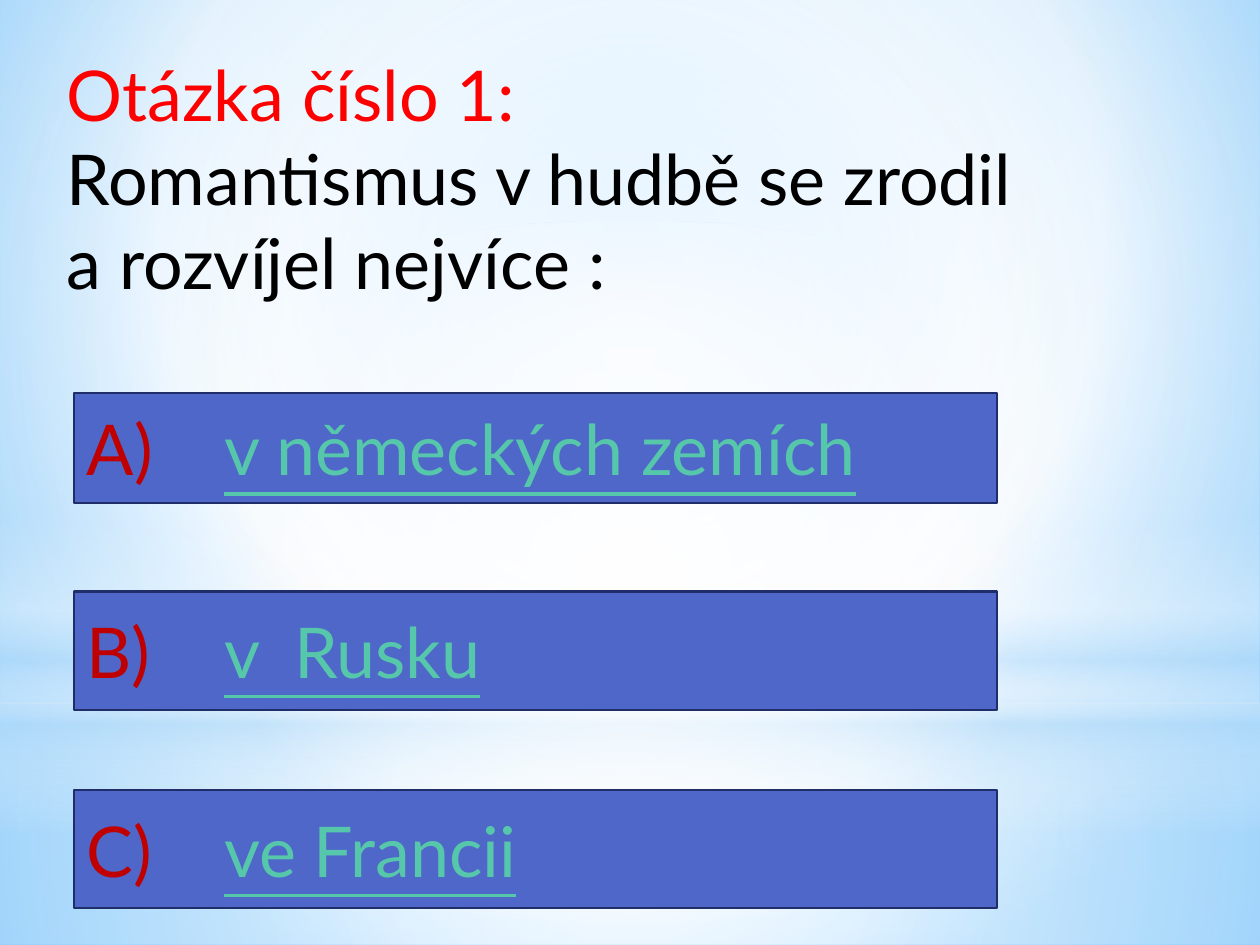
from lxml import etree
from pptx import Presentation
from pptx import util as u
from pptx.dml.color import RGBColor
from pptx.enum import shapes, text
from pptx.oxml.ns import qn

FONT = "Lato"
WHITE, PALE_BLUE = "FFFFFF", "B4DCFA"
CENTER = (50, 50, 50, 50)


def color(hex_value):
    return RGBColor.from_string(hex_value)


def set_gradient(fill, owner, stops, focus=None, angle=0):
    """Stops are (position %, colour, opacity %); a focus makes it radial."""
    fill.gradient()
    gradient = owner.find(".//" + qn("a:gradFill"))
    for child in list(gradient):
        gradient.remove(child)
    stop_list = etree.SubElement(gradient, qn("a:gsLst"))
    for position, hex_value, opacity in stops:
        stop = etree.SubElement(stop_list, qn("a:gs"), pos=str(position * 1000))
        tone = etree.SubElement(stop, qn("a:srgbClr"), val=hex_value)
        if opacity < 100:
            etree.SubElement(tone, qn("a:alpha"), val=str(opacity * 1000))
    if focus:
        shade = etree.SubElement(gradient, qn("a:path"), path="circle")
        sides = {side: str(value * 1000) for side, value in zip("ltrb", focus)}
        etree.SubElement(shade, qn("a:fillToRect"), **sides)
    else:
        etree.SubElement(gradient, qn("a:lin"), ang=str(angle * 60000), scaled="0")


def add_glow(slide, kind, top, height, stops, focus=None, angle=0):
    glow = slide.shapes.add_shape(
        kind, 0, u.Inches(top), u.Inches(10), u.Inches(height))
    glow.shadow.inherit = False
    glow.line.fill.background()
    set_gradient(glow.fill, glow.element, stops, focus, angle)


def add_backdrop(slide):
    set_gradient(slide.background.fill, slide.element,
                 [(0, "9ED5FF", 100), (60, WHITE, 100), (100, "5BB9FF", 100)],
                 (20, 10, 20, 60))
    rectangle, oval = shapes.MSO_SHAPE.RECTANGLE, shapes.MSO_SHAPE.OVAL
    # Floor, sky, horizon band and central light
    add_glow(slide, rectangle, 5.58, 1.92,
             [(0, WHITE, 91), (37, WHITE, 76), (100, PALE_BLUE, 79)], CENTER)
    add_glow(slide, rectangle, 0, 5.58,
             [(0, WHITE, 89), (48, WHITE, 62), (100, PALE_BLUE, 79)], CENTER)
    add_glow(slide, rectangle, 4.12, 2.5,
             [(0, WHITE, 0), (29, WHITE, 30), (45, PALE_BLUE, 40),
              (55, WHITE, 26), (65, PALE_BLUE, 60), (100, WHITE, 0)], angle=90)
    add_glow(slide, oval, 1.75, 5.58, [(0, WHITE, 100), (56, WHITE, 0)], CENTER)


def format_paragraph(para):
    para.alignment = text.PP_ALIGN.LEFT
    para.font.name = FONT
    para.font.size = u.Pt(40)


def add_span(para, words, hex_value):
    span = para.add_run()
    span.text = words
    span.font.color.rgb = color(hex_value)
    return span


def add_question(slide, heading, lines):
    title = slide.shapes.title
    title.left, title.top = u.Inches(0.43), u.Inches(0.36)
    title.width, title.height = u.Inches(9.13), u.Inches(2.12)
    frame = title.text_frame
    frame.word_wrap = True
    frame.auto_size = text.MSO_AUTO_SIZE.SHAPE_TO_FIT_TEXT
    frame.vertical_anchor = text.MSO_ANCHOR.TOP
    para = frame.paragraphs[0]
    format_paragraph(para)
    add_span(para, heading, "FF0000")
    for line in lines:
        para.add_line_break()
        add_span(para, line, "000000")
    # Bring the title in front of the backdrop
    title.element.getparent().append(title.element)


def add_answer(slide, letter, answer, top, height):
    box = slide.shapes.add_shape(
        shapes.MSO_SHAPE.RECTANGLE,
        u.Inches(0.59), u.Inches(top), u.Inches(7.32), u.Inches(height))
    box.shadow.inherit = False
    box.fill.solid()
    box.fill.fore_color.rgb = color("4E67C8")
    box.line.color.rgb = color("1F2E69")
    box.line.width = u.Pt(1.25)
    box.text_frame.word_wrap = True
    box.text_frame.vertical_anchor = text.MSO_ANCHOR.MIDDLE
    para = box.text_frame.paragraphs[0]
    format_paragraph(para)
    # Hanging indent: the tab after the letter leads to the answer
    indent = u.Inches(1.09)
    properties = para._p.get_or_add_pPr()
    properties.set("marL", str(indent))
    properties.set("indent", str(-indent))
    add_span(para, f"{letter})\t", "C00000")
    add_span(para, answer, "56C7AA").font.underline = True


def main():
    deck = Presentation()
    deck.slide_width, deck.slide_height = u.Inches(10), u.Inches(7.5)
    slide = deck.slides.add_slide(deck.slide_layouts[5])
    add_backdrop(slide)
    add_question(slide, "Otázka číslo 1:",
                 ["Romantismus v hudbě se zrodil ", "a rozvíjel nejvíce :"])
    answers = [("A", "v německých zemích", 0.87),
               ("B", "v  Rusku", 0.94),
               ("C", "ve Francii", 0.94)]
    for row, (letter, answer, height) in enumerate(answers):
        add_answer(slide, letter, answer, 3.12 + 1.575 * row, height)
    deck.save("out.pptx")


if __name__ == "__main__":
    main()
